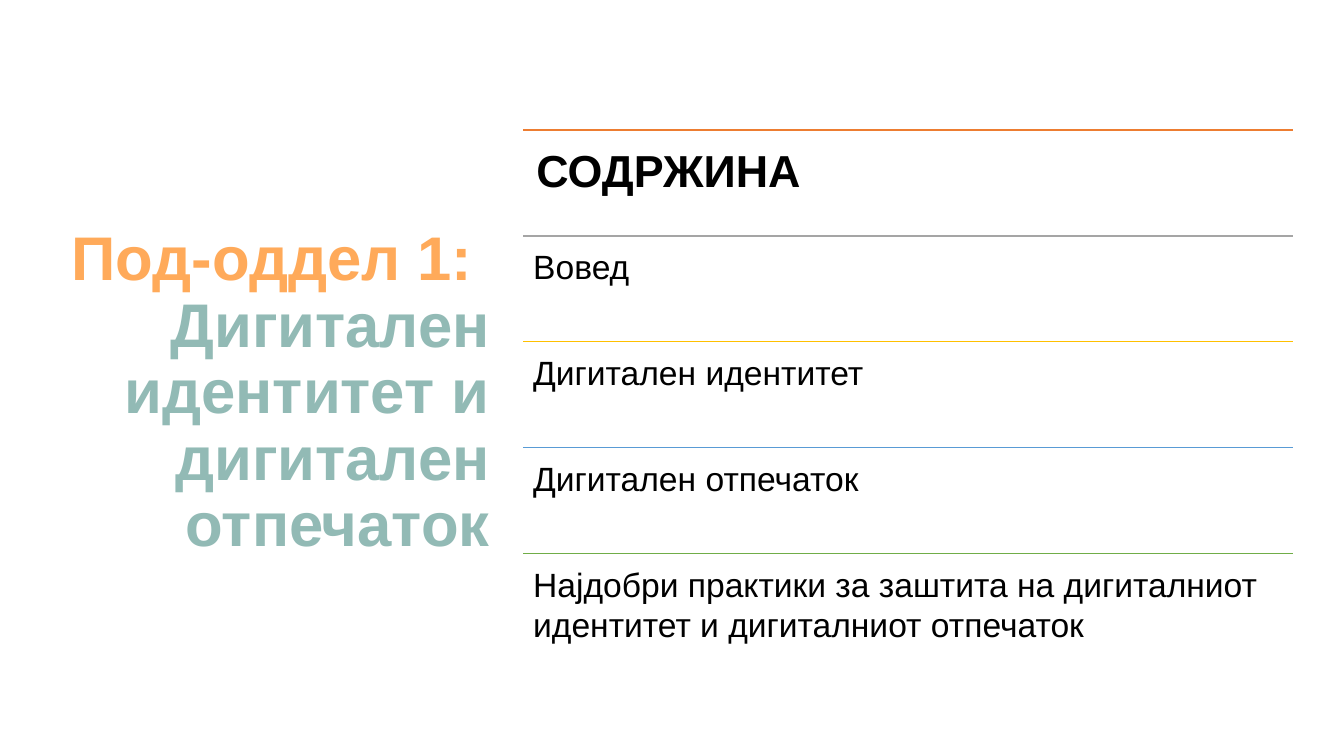
from lxml import etree
from pptx import Presentation
from pptx import util as u
from pptx.dml.color import RGBColor
from pptx.enum import shapes, text
from pptx.oxml.ns import qn

TITLE = [("Под-оддел 1: ", "FFAA5A"),
         ("Дигитален идентитет и дигитален отпечаток", "92BAB5")]
HEADING = {"size": u.Pt(32), "bold": True}
TOPIC = {"size": u.Pt(24), "bold": False}
# wording, rule colour, font format, inset
CONTENTS = [
    ("СОДРЖИНА", "ED7D31", HEADING, 0.13),
    ("Вовед", "A5A5A5", TOPIC, 0.1),
    ("Дигитален идентитет", "FFC000", TOPIC, 0.1),
    ("Дигитален отпечаток", "599BD5", TOPIC, 0.1),
    ("Најдобри практики за заштита на дигиталниот идентитет и "
     "дигиталниот отпечаток", "70AD47", TOPIC, 0.1),
]
LIST_LEFT, LIST_TOP, LIST_WIDTH, ROW_HEIGHT = 5.19, 1.29, 7.63, 1.05


def rgb(value):
    return RGBColor.from_string(value)


def add_frame(slide, box, inset_x, inset_y, anchor):
    frame = slide.shapes.add_textbox(*map(u.Inches, box)).text_frame
    settings = {"word_wrap": True, "vertical_anchor": anchor,
                "margin_left": u.Inches(inset_x), "margin_right": u.Inches(inset_x),
                "margin_top": u.Inches(inset_y), "margin_bottom": u.Inches(inset_y)}
    for name, value in settings.items():
        setattr(frame, name, value)
    return frame


def add_run(paragraph, wording, colour, style):
    run = paragraph.add_run()
    run.text = wording
    for name, value in {"name": "Arial", **style}.items():
        setattr(run.font, name, value)
    run.font.color.rgb = rgb(colour)


def add_rule(slide, top, colour):
    rule = slide.shapes.add_connector(
        shapes.MSO_CONNECTOR.STRAIGHT,
        *map(u.Inches, (LIST_LEFT, top, LIST_LEFT + LIST_WIDTH, top)))
    rule.line.color.rgb = rgb(colour)
    rule.line.width = u.Pt(1)
    etree.SubElement(rule._element.spPr, qn("a:effectLst"))


def add_title(slide):
    frame = add_frame(slide, (0.38, 0.85, 4.58, 6.11), 0.1, 0.05,
                      text.MSO_ANCHOR.MIDDLE)
    title = frame.paragraphs[0]
    title.alignment = text.PP_ALIGN.RIGHT
    title.line_spacing = 0.9
    for index, (wording, colour) in enumerate(TITLE):
        if index:
            title.add_line_break()
        add_run(title, wording, colour, {"size": u.Pt(44), "bold": True})


def add_contents(slide):
    for row, (wording, rule_colour, style, inset) in enumerate(CONTENTS):
        top = LIST_TOP + row * ROW_HEIGHT
        add_rule(slide, top, rule_colour)
        frame = add_frame(slide, (LIST_LEFT, top, LIST_WIDTH, ROW_HEIGHT),
                          inset, inset, text.MSO_ANCHOR.TOP)
        add_run(frame.paragraphs[0], wording, "000000", style)


def main():
    deck = Presentation()
    deck.slide_width, deck.slide_height = u.Inches(13.33), u.Inches(7.5)
    slide = deck.slides.add_slide(deck.slide_layouts[6])
    add_title(slide)
    add_contents(slide)
    deck.save("out.pptx")


if __name__ == "__main__":
    main()
